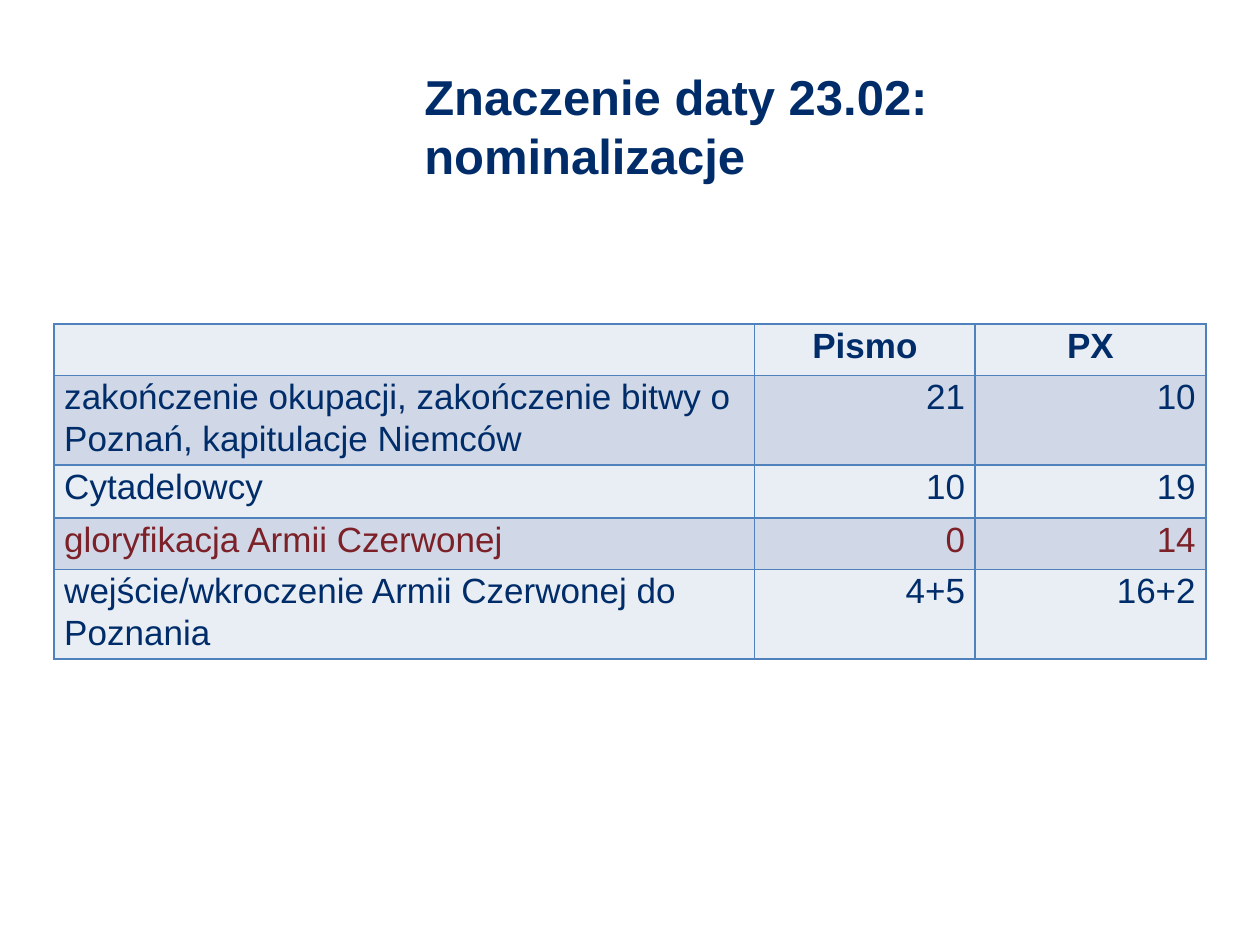
from lxml.etree import SubElement
from pptx import Presentation
from pptx.dml.color import RGBColor
from pptx.enum.text import MSO_ANCHOR, PP_ALIGN
from pptx.oxml.ns import qn
from pptx.util import Inches, Pt

COLOURS = {
    "navy": "002D69",
    "red": "7C2128",
    "border": "4F81BD",
    "light": "E9EDF4",
    "dark": "D0D8E8",
}
HEADER = ("", "Pismo", "PX")
ROWS = [
    ("zakończenie okupacji, zakończenie bitwy o Poznań, kapitulacje Niemców", "21", "10"),
    ("Cytadelowcy", "10", "19"),
    ("gloryfikacja Armii Czerwonej", "0", "14"),
    ("wejście/wkroczenie Armii Czerwonej do Poznania", "4+5", "16+2"),
]
HIGHLIGHTED_ROW = 3
COLUMN_WIDTHS = (5.56, 1.75, 1.83)
ROW_HEIGHTS = (0.41, 0.71, 0.42, 0.41, 0.71)


class SlideBuilder:
    """Holds the shared style and the page being filled."""

    font_name = "Arial"

    def __init__(self, page):
        self.page = page

    def style(self, paragraph, size, colour, bold=False):
        font = paragraph.font
        font.name = self.font_name
        font.size = Pt(size)
        font.bold = bold
        font.color.rgb = RGBColor.from_string(COLOURS[colour])

    def title(self, text, left, top, width, height):
        box = self.page.shapes.add_textbox(
            Inches(left), Inches(top), Inches(width), Inches(height))
        frame = box.text_frame
        frame.word_wrap = True
        frame.vertical_anchor = MSO_ANCHOR.MIDDLE
        frame.text = text
        self.style(frame.paragraphs[0], 28, "navy", bold=True)

    def borders(self, cell):
        properties = cell._tc.get_or_add_tcPr()
        for side in ("lnL", "lnR", "lnT", "lnB"):
            line = SubElement(properties, qn(f"a:{side}"), w=str(Pt(1)))
            fill = SubElement(line, qn("a:solidFill"))
            SubElement(fill, qn("a:srgbClr"), val=COLOURS["border"])

    def cell(self, cell, text, alignment, fill, colour, bold):
        cell.margin_left = cell.margin_right = Inches(0.08)
        cell.margin_top = cell.margin_bottom = 0
        self.borders(cell)
        cell.fill.solid()
        cell.fill.fore_color.rgb = RGBColor.from_string(COLOURS[fill])
        cell.text = text
        paragraph = cell.text_frame.paragraphs[0]
        paragraph.alignment = alignment
        paragraph.line_spacing = 1.07
        self.style(paragraph, 20, colour, bold)

    def table(self, rows, left, top):
        table = self.page.shapes.add_table(
            len(rows), len(COLUMN_WIDTHS), Inches(left), Inches(top),
            Inches(sum(COLUMN_WIDTHS)), Inches(sum(ROW_HEIGHTS))).table
        for column, width in zip(table.columns, COLUMN_WIDTHS):
            column.width = Inches(width)
        for row, height in zip(table.rows, ROW_HEIGHTS):
            row.height = Inches(height)
        for r, values in enumerate(rows):
            fill = "dark" if r % 2 else "light"
            colour = "red" if r == HIGHLIGHTED_ROW else "navy"
            for c, text in enumerate(values):
                if r == 0:
                    alignment = PP_ALIGN.CENTER
                else:
                    alignment = PP_ALIGN.RIGHT if c else PP_ALIGN.LEFT
                self.cell(table.cell(r, c), text, alignment, fill, colour, bold=r == 0)


def main():
    deck = Presentation()
    deck.slide_width, deck.slide_height = Inches(10), Inches(7.5)
    builder = SlideBuilder(deck.slides.add_slide(deck.slide_layouts[6]))
    builder.table([HEADER, *ROWS], 0.43, 2.57)
    builder.title("Znaczenie daty 23.02: nominalizacje", 3.27, 0.44, 6.23, 1.11)
    deck.save("out.pptx")


if __name__ == "__main__":
    main()
